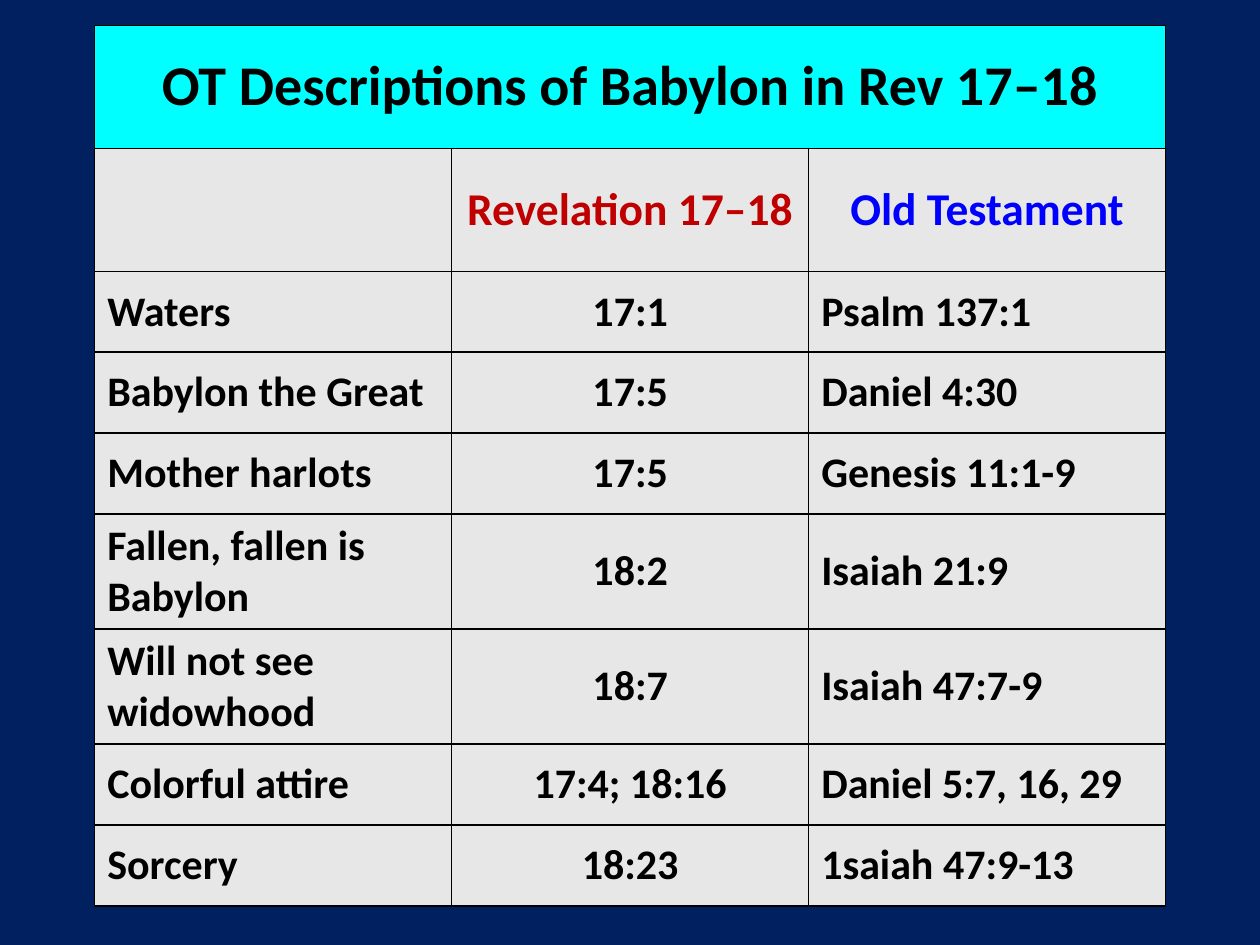
from lxml import etree
from pptx import Presentation
from pptx.dml.color import RGBColor
from pptx.enum.text import MSO_ANCHOR, PP_ALIGN
from pptx.oxml.ns import qn
from pptx.util import Cm, Pt

LEFT, CENTER = PP_ALIGN.LEFT, PP_ALIGN.CENTER
MIDDLE = MSO_ANCHOR.MIDDLE

TITLE = "OT Descriptions of Babylon in Rev 17–18"
HEADINGS = [("", "000000"), ("Revelation 17–18", "C00000"), ("Old Testament", "0000FF")]
ROWS = [
    ("Waters", "17:1", "Psalm 137:1"),
    ("Babylon the Great", "17:5", "Daniel 4:30"),
    ("Mother harlots", "17:5", "Genesis 11:1-9"),
    ("Fallen, fallen is Babylon", "18:2", "Isaiah 21:9"),
    ("Will not see widowhood", "18:7", "Isaiah 47:7-9"),
    ("Colorful attire", "17:4; 18:16", "Daniel 5:7, 16, 29"),
    ("Sorcery", "18:23", "1saiah 47:9-13"),
]
ALIGNS = (LEFT, CENTER, LEFT)
FONT = "Calibri"
NAVY, CYAN, GREY, BLACK = "002060", "00FFFF", "E7E7E7", "000000"
TABLE_WIDTH, HEAD_HEIGHT, ROW_HEIGHT = 21.59, 2.48, 1.63


def paint(fill, color):
    fill.solid()
    fill.fore_color.rgb = RGBColor.from_string(color)


def add_borders(cell):
    tcPr = cell._tc.get_or_add_tcPr()
    for i, side in enumerate(("a:lnL", "a:lnR", "a:lnT", "a:lnB")):
        ln = etree.Element(qn(side), w=str(Pt(1)))
        fill = etree.SubElement(ln, qn("a:solidFill"))
        etree.SubElement(fill, qn("a:srgbClr"), val=BLACK)
        tcPr.insert(i, ln)


def write(cell, text, size, align, color=BLACK):
    cell.vertical_anchor = MIDDLE
    p = cell.text_frame.paragraphs[0]
    p.alignment = align
    r = p.add_run()
    r.text = text
    r.font.name, r.font.size, r.font.bold = FONT, Pt(size), True
    r.font.color.rgb = RGBColor.from_string(color)


prs = Presentation()
prs.slide_width, prs.slide_height = Cm(25.4), Cm(19.05)
s = prs.slides.add_slide(prs.slide_layouts[6])
paint(s.background.fill, NAVY)

heights = [HEAD_HEIGHT] * 2 + [ROW_HEIGHT] * len(ROWS)
table = s.shapes.add_table(len(heights), len(HEADINGS), Cm(1.91), Cm(0.51),
                           Cm(TABLE_WIDTH), Cm(sum(heights))).table
for row, height in zip(table.rows, heights):
    row.height = Cm(height)
for i, row in enumerate(table.rows):
    for cell in row.cells:
        paint(cell.fill, GREY if i else CYAN)
        add_borders(cell)

table.cell(0, 0).merge(table.cell(0, len(HEADINGS) - 1))
write(table.cell(0, 0), TITLE, 32, CENTER)
for col, (text, color) in enumerate(HEADINGS):
    if text:
        write(table.cell(1, col), text, 26, CENTER, color)
for i, texts in enumerate(ROWS, start=2):
    for col, (text, align) in enumerate(zip(texts, ALIGNS)):
        write(table.cell(i, col), text, 24, align)

prs.save("out.pptx")
